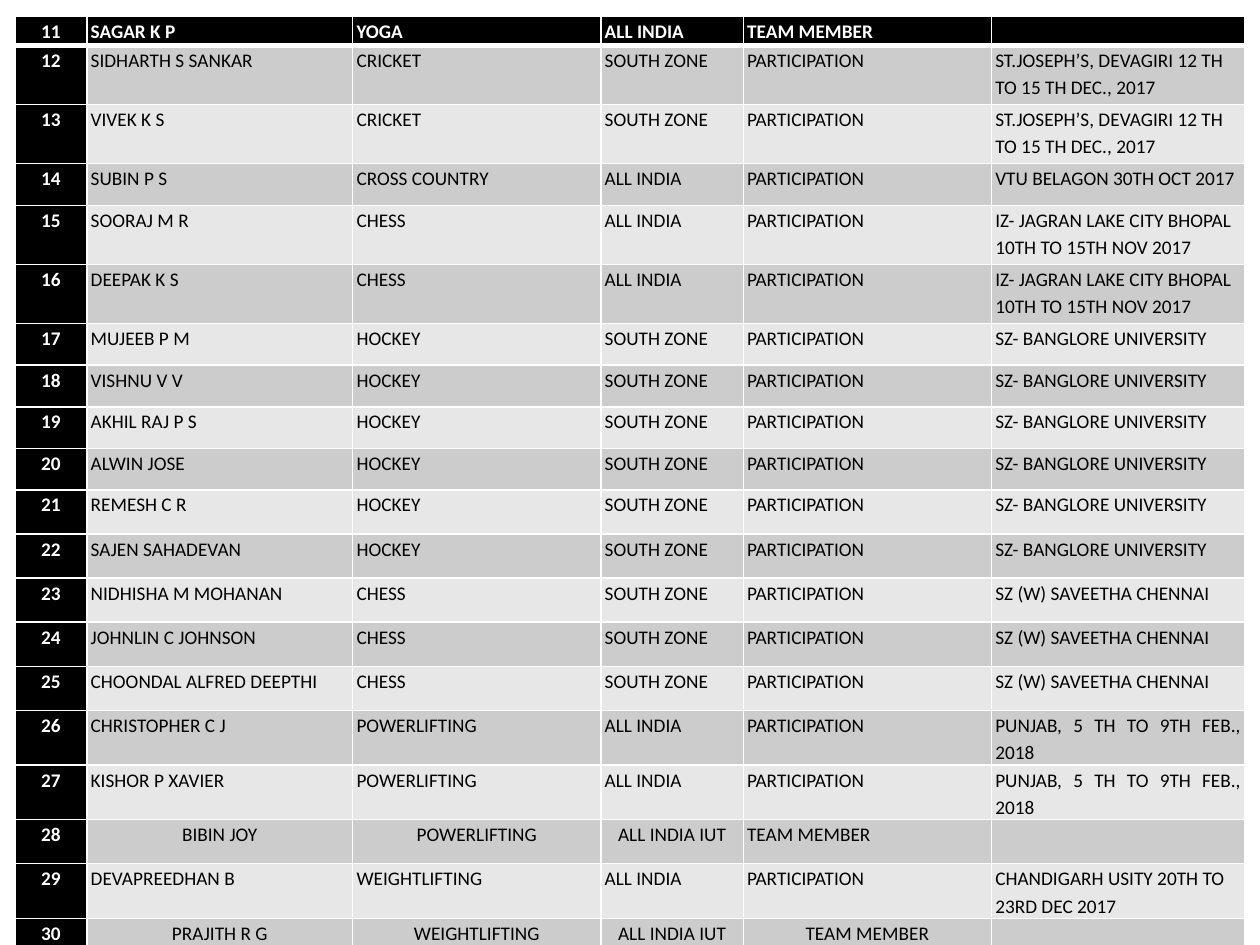
from dataclasses import dataclass

import pptx
import pptx.dml.color
import pptx.enum.text
import pptx.oxml.ns
import pptx.util
from lxml import etree

Inches = pptx.util.Inches
Pt = pptx.util.Pt
Color = pptx.dml.color.RGBColor.from_string
qn = pptx.oxml.ns.qn


@dataclass(frozen=True)
class Theme:
    font: str = "Calibri"
    size: int = 11
    dark: str = "000000"
    light: str = "FFFFFF"
    bands: tuple = ("E7E7E7", "CCCCCC")
    line_spacing: float = 1.15
    border: int = 1
    header_border: int = 3


THEME = Theme()
ALIGNMENTS = {
    "l": pptx.enum.text.PP_ALIGN.LEFT,
    "c": pptx.enum.text.PP_ALIGN.CENTER,
    "j": pptx.enum.text.PP_ALIGN.JUSTIFY,
}
FIRST_NUMBER = 11
COLUMN_WIDTHS = (0.57, 2.11, 1.97, 1.13, 1.97, 2.01)
ROW_HEIGHTS = [0.23, 0.47, 0.47, 0.33, 0.47, 0.47] + [0.33] * 4 + [0.35] * 10
ROW_ALIGNMENTS = {26: "cjjjjj", 27: "cljjjj", 28: "ccccjl", 30: "cccccl"}

DEVAGIRI = "ST.JOSEPH’S, DEVAGIRI 12 TH TO 15 TH DEC., 2017"
BHOPAL = "IZ- JAGRAN LAKE CITY BHOPAL 10TH TO 15TH NOV 2017"
BANGLORE = "SZ- BANGLORE UNIVERSITY"
CHENNAI = "SZ (W) SAVEETHA CHENNAI"
PUNJAB = "PUNJAB, 5 TH TO 9TH FEB., 2018"
CHANDIGARH = "CHANDIGARH USITY 20TH TO 23RD DEC 2017"
SOUTH = "SOUTH ZONE"
INDIA = "ALL INDIA"
INDIA_IUT = "ALL INDIA IUT"
PLAYED = "PARTICIPATION"
MEMBER = "TEAM MEMBER"

ATHLETES = [
    ("SAGAR K P", "YOGA", INDIA, MEMBER, ""),
    ("SIDHARTH S SANKAR", "CRICKET", SOUTH, PLAYED, DEVAGIRI),
    ("VIVEK K S", "CRICKET", SOUTH, PLAYED, DEVAGIRI),
    ("SUBIN P S", "CROSS COUNTRY", INDIA, PLAYED, "VTU BELAGON 30TH OCT 2017"),
    ("SOORAJ M R", "CHESS", INDIA, PLAYED, BHOPAL),
    ("DEEPAK K S", "CHESS", INDIA, PLAYED, BHOPAL),
    ("MUJEEB P M", "HOCKEY", SOUTH, PLAYED, BANGLORE),
    ("VISHNU V V", "HOCKEY", SOUTH, PLAYED, BANGLORE),
    ("AKHIL RAJ P S", "HOCKEY", SOUTH, PLAYED, BANGLORE),
    ("ALWIN JOSE", "HOCKEY", SOUTH, PLAYED, BANGLORE),
    ("REMESH C R", "HOCKEY", SOUTH, PLAYED, BANGLORE),
    ("SAJEN SAHADEVAN", "HOCKEY", SOUTH, PLAYED, BANGLORE),
    ("NIDHISHA M MOHANAN", "CHESS", SOUTH, PLAYED, CHENNAI),
    ("JOHNLIN C JOHNSON", "CHESS", SOUTH, PLAYED, CHENNAI),
    ("CHOONDAL ALFRED DEEPTHI", "CHESS", SOUTH, PLAYED, CHENNAI),
    ("CHRISTOPHER C J", "POWERLIFTING", INDIA, PLAYED, PUNJAB),
    ("KISHOR P XAVIER", "POWERLIFTING", INDIA, PLAYED, PUNJAB),
    ("BIBIN JOY", "POWERLIFTING", INDIA_IUT, MEMBER, ""),
    ("DEVAPREEDHAN B", "WEIGHTLIFTING", INDIA, PLAYED, CHANDIGARH),
    ("PRAJITH R G", "WEIGHTLIFTING", INDIA_IUT, MEMBER, ""),
]


def set_borders(cell, top, bottom):
    properties = cell._tc.get_or_add_tcPr()
    widths = {"lnL": THEME.border, "lnR": THEME.border, "lnT": top, "lnB": bottom}
    for side, width in widths.items():
        line = etree.SubElement(properties, qn(f"a:{side}"), w=str(Pt(width)))
        fill = etree.SubElement(line, qn("a:solidFill"))
        etree.SubElement(fill, qn("a:srgbClr"), val=THEME.light)


def set_text(cell, text, alignment, color, bold):
    cell.margin_left = cell.margin_right = Inches(0.03)
    cell.margin_top = cell.margin_bottom = 0
    cell.text_frame.text = text
    paragraph = cell.text_frame.paragraphs[0]
    paragraph.alignment = ALIGNMENTS[alignment]
    paragraph.line_spacing = THEME.line_spacing
    for run in paragraph.runs:
        run.font.name = THEME.font
        run.font.size = Pt(THEME.size)
        run.font.bold = bold
        run.font.color.rgb = Color(color)
    if not text:
        etree.SubElement(paragraph._p, qn("a:endParaRPr"), sz=str(THEME.size * 100))


def add_athlete_table(slide, left, top, width, height):
    shape = slide.shapes.add_table(
        len(ATHLETES), len(COLUMN_WIDTHS), left, top, width, height
    )
    table = shape.table
    table.horz_banding = False
    for column, column_width in zip(table.columns, COLUMN_WIDTHS):
        column.width = Inches(column_width)
    for row, row_height in zip(table.rows, ROW_HEIGHTS):
        row.height = Inches(row_height)

    for row_index, athlete in enumerate(ATHLETES):
        number = FIRST_NUMBER + row_index
        alignments = ROW_ALIGNMENTS.get(number, "clllll")
        top_border = THEME.header_border if row_index == 1 else THEME.border
        bottom_border = THEME.header_border if row_index == 0 else THEME.border
        for column_index, text in enumerate((str(number), *athlete)):
            cell = table.cell(row_index, column_index)
            emphasized = row_index == 0 or column_index == 0
            color = THEME.light if emphasized else THEME.dark
            set_text(cell, text, alignments[column_index], color, emphasized)
            set_borders(cell, top_border, bottom_border)
            cell.fill.solid()
            background = THEME.dark if emphasized else THEME.bands[row_index % 2]
            cell.fill.fore_color.rgb = Color(background)


def main():
    presentation = pptx.Presentation()
    presentation.slide_width = Inches(10)
    presentation.slide_height = Inches(7.5)
    slide = presentation.slides.add_slide(presentation.slide_layouts[6])
    add_athlete_table(slide, Inches(0.12), Inches(0.13), Inches(9.76), Inches(7.46))
    presentation.save("out.pptx")


if __name__ == "__main__":
    main()
